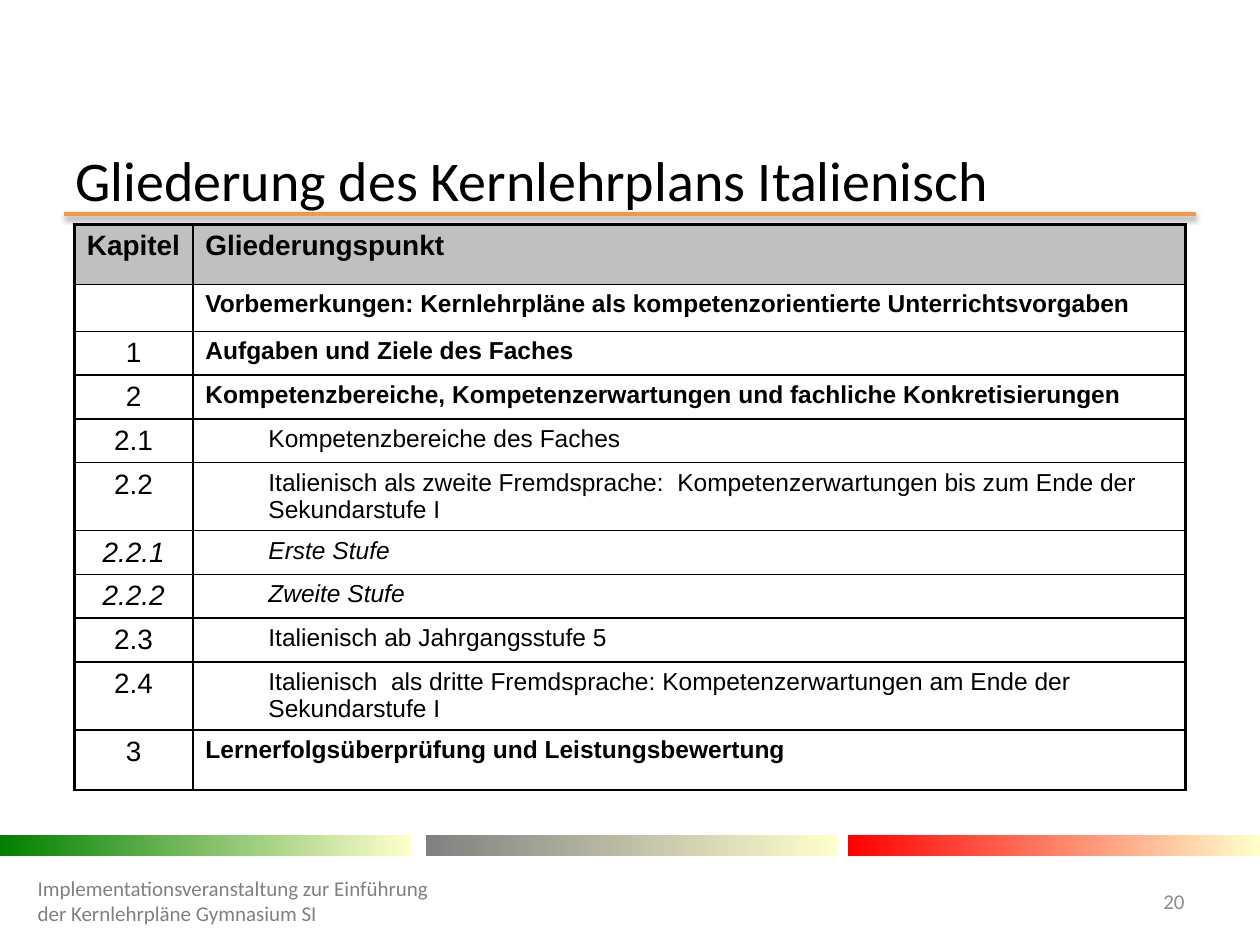
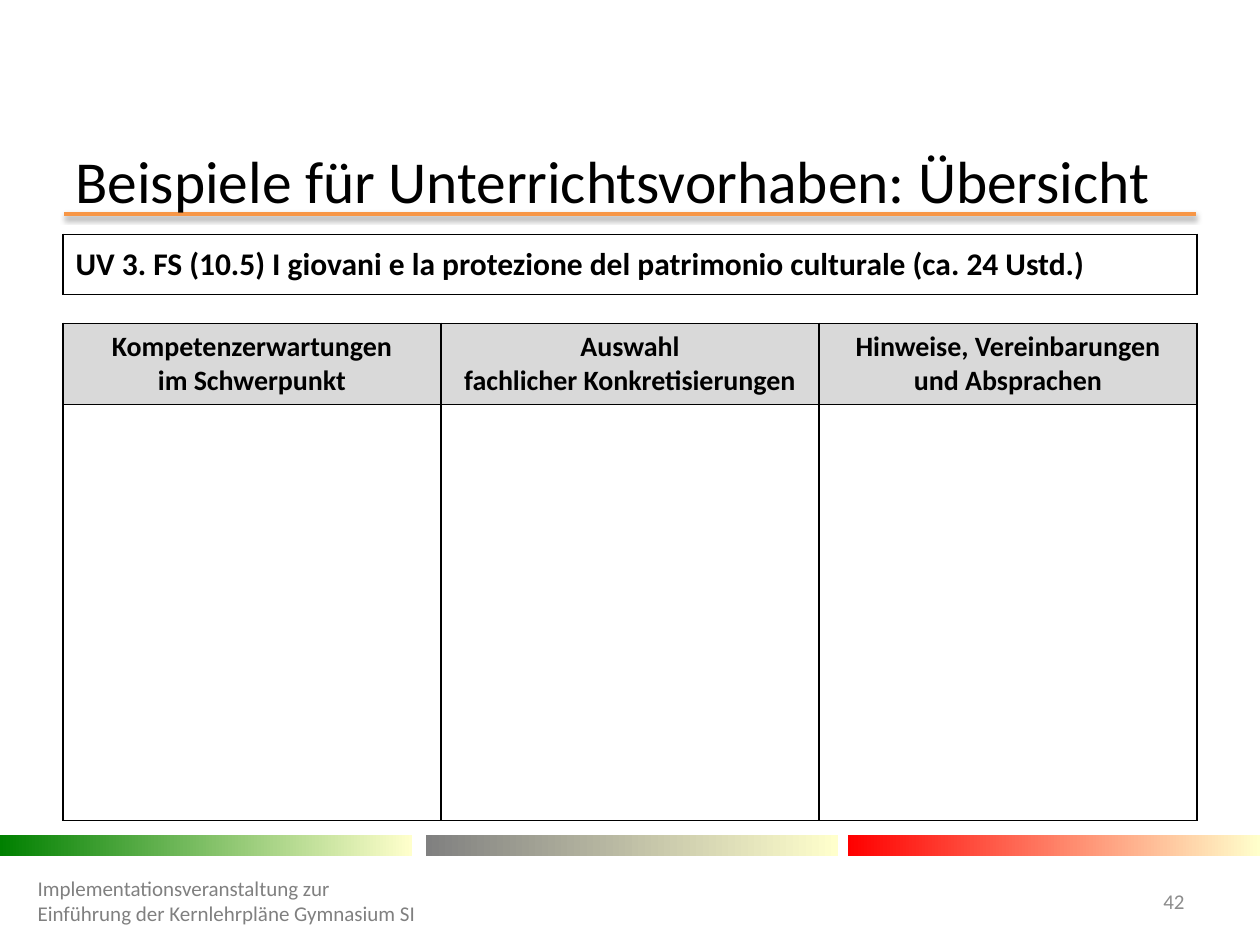
from lxml import etree
from pptx import Presentation
from pptx.dml.color import RGBColor
from pptx.enum.shapes import MSO_CONNECTOR, MSO_SHAPE
from pptx.enum.text import MSO_ANCHOR, MSO_AUTO_SIZE, PP_ALIGN
from pptx.oxml.ns import qn
from pptx.util import Pt

LEFT, CENTER, RIGHT = PP_ALIGN.LEFT, PP_ALIGN.CENTER, PP_ALIGN.RIGHT
TOP, MIDDLE = MSO_ANCHOR.TOP, MSO_ANCHOR.MIDDLE
RECT = MSO_SHAPE.RECTANGLE
STRAIGHT = MSO_CONNECTOR.STRAIGHT
NO_FIT = MSO_AUTO_SIZE.NONE

COLORS = {
    "text": "000000", "rule": "F79646", "footer": "808080", "number": "8C8C8C",
    "green": "008000", "gray": "808080", "red": "FF0000", "cream": "FFFFCC",
    "chapter_head": "C0C0C0", "plan_head": "D9D9D9",
}
BANDS = [(0, "green"), (243.4, "gray"), (484.6, "red")]
FOOTER = "Implementationsveranstaltung zur Einführung der Kernlehrpläne Gymnasium SI"
THIN, THICK = 1, 2.25

CHAPTERS = [
    ("", "Vorbemerkungen: Kernlehrpläne als kompetenzorientierte Unterrichtsvorgaben"),
    ("1", "Aufgaben und Ziele des Faches"),
    ("2", "Kompetenzbereiche, Kompetenzerwartungen und fachliche Konkretisierungen"),
    ("2.1", "Kompetenzbereiche des Faches"),
    ("2.2", "Italienisch als zweite Fremdsprache:  Kompetenzerwartungen bis zum Ende der Sekundarstufe I"),
    ("2.2.1", "Erste Stufe"),
    ("2.2.2", "Zweite Stufe"),
    ("2.3", "Italienisch ab Jahrgangsstufe 5"),
    ("2.4", "Italienisch  als dritte Fremdsprache: Kompetenzerwartungen am Ende der Sekundarstufe I"),
    ("3", "Lernerfolgsüberprüfung und Leistungsbewertung"),
]
CHAPTER_HEIGHTS = [34.3, 25, 25, 25, 25, 38.9, 25, 25, 25, 38.9, 34.3]

PLAN_TITLE = "UV 3. FS (10.5) I giovani e la protezione del patrimonio culturale (ca. 24 Ustd.)"
PLAN_HEADS = [
    "Kompetenzerwartungen\vim Schwerpunkt",
    "Auswahl\vfachlicher Konkretisierungen",
    "Hinweise, Vereinbarungen und Absprachen",
]
PLAN_HEIGHTS = [34.3, 16.6, 46.3, 237.7]


def rgb(name):
    return RGBColor.from_string(COLORS[name])


class Deck:
    def __init__(self, prs):
        self.prs = prs
        self.s = None

    def new_slide(self, title, title_size, number, footer_width):
        self.s = self.prs.slides.add_slide(self.prs.slide_layouts[6])
        self.rule(36.7, 122.4, 646.6)
        for x, color in BANDS:
            self.band(x, 477.4, 235.4, 11.5, color)
        self.text_box(36, 88.6, 648, 28, title, size=title_size)
        self.text_box(14.4, 500.4, footer_width, 28.8, FOOTER, size=12, color="footer")
        self.text_box(638, 500.4, 46, 28.8, number, align=RIGHT, size=12, color="number")

    def rule(self, x, y, w):
        sp = self.s.shapes.add_connector(STRAIGHT, Pt(x), Pt(y), Pt(x + w), Pt(y))
        sp.line.width = Pt(2)
        sp.line.color.rgb = rgb("rule")
        effects = etree.SubElement(sp._element.spPr, qn("a:effectLst"))
        shadow = etree.SubElement(effects, qn("a:outerShdw"), blurRad=str(int(Pt(3.1))),
                                  dist=str(int(Pt(1.6))), dir="5400000", rotWithShape="0")
        color = etree.SubElement(shadow, qn("a:srgbClr"), val=COLORS["text"])
        etree.SubElement(color, qn("a:alpha"), val="38000")

    def band(self, x, y, w, h, color):
        sp = self.s.shapes.add_shape(RECT, Pt(x), Pt(y), Pt(w), Pt(h))
        sp.shadow.inherit = False
        sp.line.fill.background()
        sp.fill.gradient()
        sp.fill.gradient_angle = 0
        for stop, name in zip(sp.fill.gradient_stops, (color, "cream")):
            stop.color.rgb = rgb(name)

    def text_box(self, x, y, w, h, text, **style):
        tf = self.s.shapes.add_textbox(Pt(x), Pt(y), Pt(w), Pt(h)).text_frame
        options = {"word_wrap": True, "auto_size": NO_FIT, "vertical_anchor": MIDDLE}
        for name, value in options.items():
            setattr(tf, name, value)
        self.fill_text(tf, text, **style)

    def fill_text(self, tf, text, align=LEFT, size=16, font="Calibri", color="text",
                  bold=False, italic=False, indent=0):
        p = tf.paragraphs[0]
        p.text = text
        p.alignment = align
        if indent:
            p._p.get_or_add_pPr().set("marL", str(int(Pt(indent))))
        if not text:
            etree.SubElement(p._p, qn("a:endParaRPr"), sz=str(size * 100))
        style = {"name": font, "size": Pt(size), "bold": bold, "italic": italic}
        for r in p.runs:
            for name, value in style.items():
                setattr(r.font, name, value)
            r.font.color.rgb = rgb(color)

    def table(self, x, y, widths, heights):
        frame = self.s.shapes.add_table(len(heights), len(widths), Pt(x), Pt(y),
                                        Pt(sum(widths)), Pt(sum(heights)))
        table = frame.table
        table.first_row = table.horz_banding = False
        for column, w in zip(table.columns, widths):
            column.width = Pt(w)
        for row, h in zip(table.rows, heights):
            row.height = Pt(h)
        return table

    def cell(self, cell, text, fill=None, anchor=TOP, borders=(THIN,) * 4, **style):
        self.fill_text(cell.text_frame, text, **style)
        cell.vertical_anchor = anchor
        tcPr = cell._tc.get_or_add_tcPr()
        for side, width in zip("LRTB", borders):
            ln = etree.SubElement(tcPr, qn("a:ln" + side), w=str(int(Pt(width))))
            if width:
                solid = etree.SubElement(ln, qn("a:solidFill"))
                etree.SubElement(solid, qn("a:srgbClr"), val=COLORS["text"])
            else:
                etree.SubElement(ln, qn("a:noFill"))
        if fill:
            cell.fill.solid()
            cell.fill.fore_color.rgb = rgb(fill)
        else:
            cell.fill.background()


def outline_slide(deck):
    deck.new_slide("Gliederung des Kernlehrplans Italienisch", 32, "20", 238.3)
    table = deck.table(42.5, 128.2, [67.7, 567.4], CHAPTER_HEIGHTS)
    for i, text in enumerate(("Kapitel", "Gliederungspunkt")):
        sides = (THIN, THICK) if i else (THICK, THIN)
        deck.cell(table.cell(0, i), text, fill="chapter_head", font="Arial", bold=True,
                  borders=(*sides, THICK, THIN))
    for i, (number, topic) in enumerate(CHAPTERS, 1):
        depth = number.count(".")
        italic = depth == 2
        deck.cell(table.cell(i, 0), number, font="Arial", align=CENTER, italic=italic,
                  borders=(THICK, THIN, THIN, THIN))
        deck.cell(table.cell(i, 1), topic, font="Arial", size=14, italic=italic,
                  bold=depth == 0, indent=36 if depth else 0,
                  borders=(THIN, THICK, THIN, THIN))


def plan_slide(deck):
    deck.new_slide("Beispiele für Unterrichtsvorhaben: Übersicht", 34, "42", 233.3)
    table = deck.table(36, 133.9, [216] * 3, PLAN_HEIGHTS)
    for i, head in enumerate(PLAN_HEADS):
        deck.cell(table.cell(0, i), "" if i else PLAN_TITLE, anchor=MIDDLE, size=18, bold=True)
        deck.cell(table.cell(1, i), "", size=6, borders=(0, 0, THIN, THIN))
        deck.cell(table.cell(2, i), head, fill="plan_head", anchor=MIDDLE,
                  align=CENTER, bold=True)
        deck.cell(table.cell(3, i), "")
    table.cell(0, 0).merge(table.cell(0, 2))
    table.cell(1, 0).merge(table.cell(1, 1))


def main():
    prs = Presentation()
    prs.slide_width, prs.slide_height = Pt(720), Pt(540)
    deck = Deck(prs)
    outline_slide(deck)
    plan_slide(deck)
    prs.save("out.pptx")


if __name__ == "__main__":
    main()
